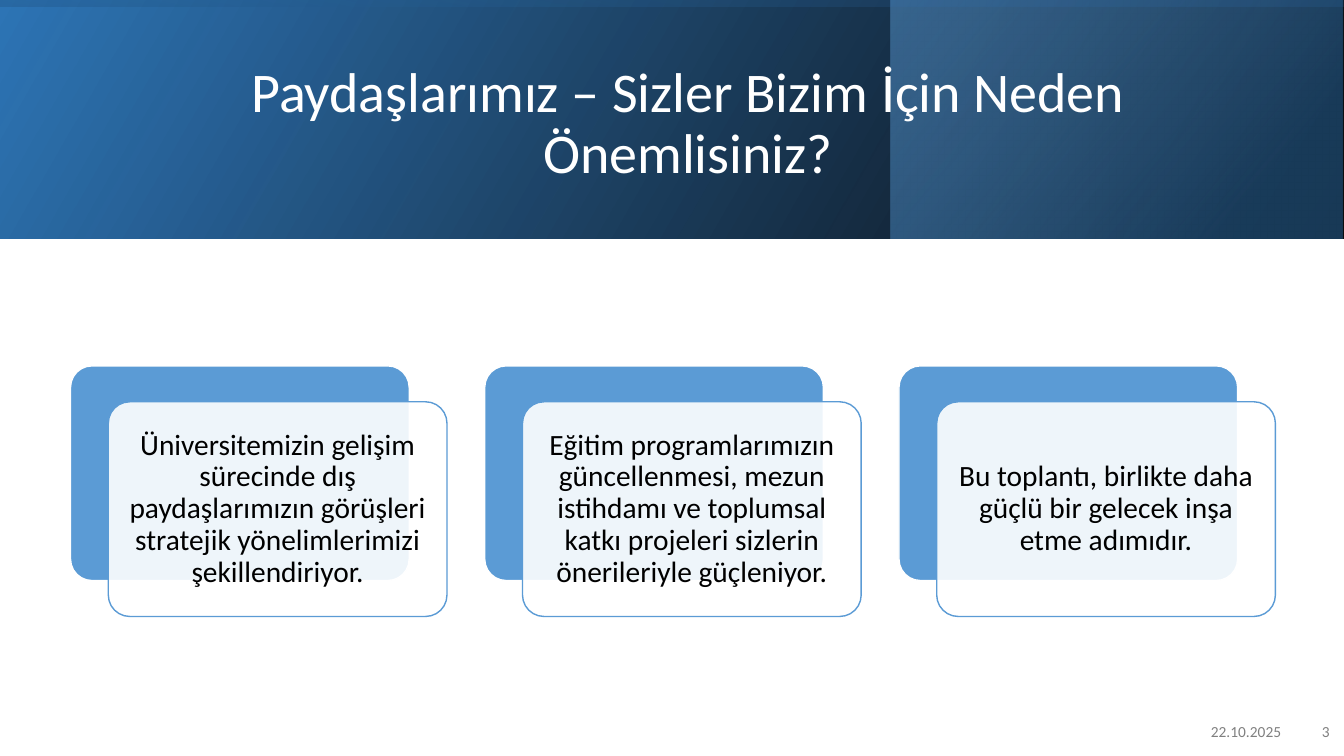
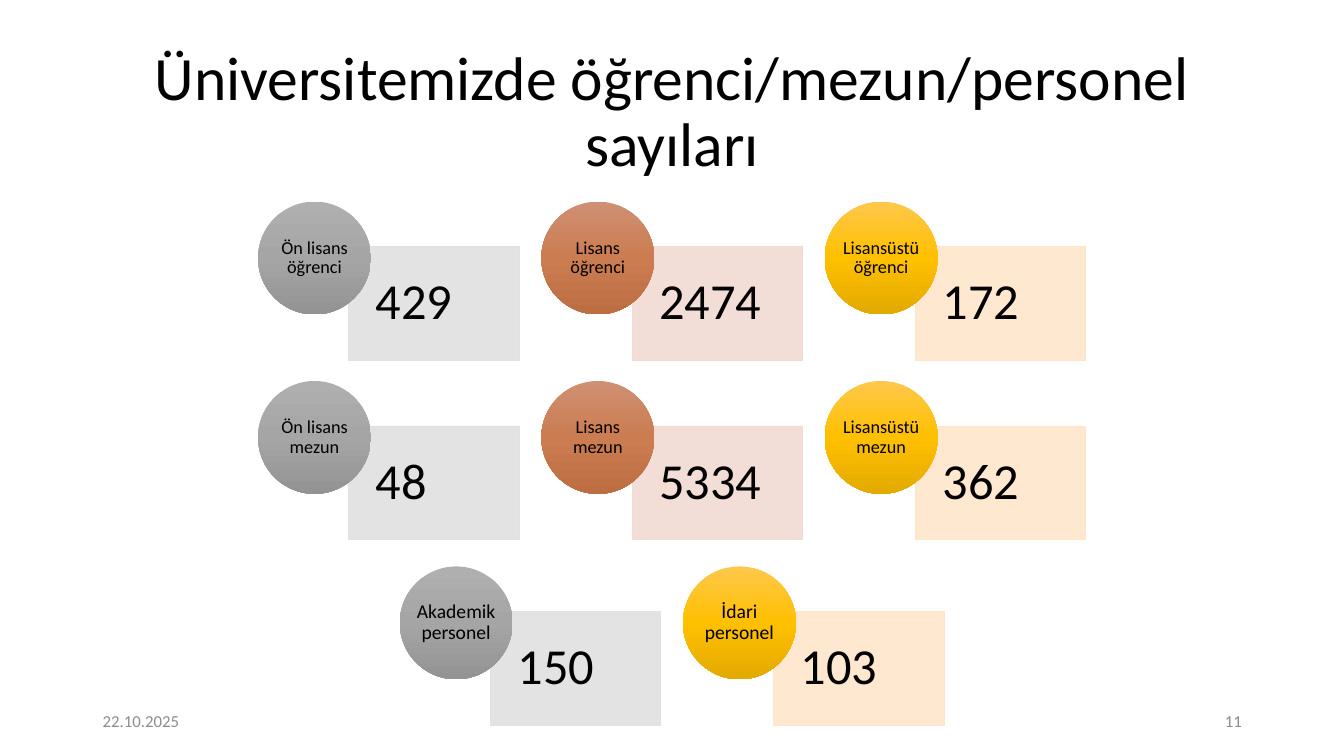
import dataclasses

import lxml.etree
import pptx
import pptx.dml.color
import pptx.enum.shapes
import pptx.enum.text
import pptx.oxml.ns
import pptx.util

ALIGN = pptx.enum.text.PP_ALIGN
SHAPE = pptx.enum.shapes.MSO_SHAPE
qn = pptx.oxml.ns.qn


@dataclasses.dataclass(frozen=True)
class Theme:
    font: str = "Calibri"
    black: str = "000000"
    white: str = "FFFFFF"
    blue: str = "5B9BD5"
    deep_blue: str = "2E75B6"
    navy: str = "1F4E79"
    banner_footer: str = "808080"
    plain_footer: str = "8C8C8C"
    banner_title_size: int = 40
    plain_title_size: int = 44
    banner_footer_size: int = 11
    plain_footer_size: int = 12
    card_size: int = 21
    count_size: int = 36
    label_size: int = 13
    staff_label_size: int = 14
    # circle gradient from top to bottom, then the tint of the count box
    grey: tuple = ("AFAFAF", "A5A5A5", "939393", "E1E1E1")
    copper: tuple = ("D09073", "CB7C50", "BC6E42", "F1DBD3")
    gold: tuple = ("FFC84B", "FFC000", "E3AA00", "FFE6CA")


theme = Theme()
deck = pptx.Presentation()
deck.slide_width = pptx.util.Inches(13.333)
deck.slide_height = pptx.util.Inches(7.5)
# All boxes are left, top, width, height on a grid of 100 columns and 100 rows.
COLUMN = deck.slide_width / 100
ROW = deck.slide_height / 100


def draw(slide, kind, box, stops, angle=0, line=None, line_width=1.0, flip=False):
    """Add a shape; stops are (position, colour, opacity), one stop is a solid fill."""
    shape = slide.shapes.add_shape(
        kind, *(round(n * unit) for n, unit in zip(box, (COLUMN, ROW) * 2)))
    shape.shadow.inherit = False
    if line:
        shape.line.color.rgb = pptx.dml.color.RGBColor.from_string(line)
        shape.line.width = pptx.util.Pt(line_width)
    else:
        shape.line.fill.background()
    properties = shape.element.spPr
    if flip:
        properties.find(qn("a:xfrm")).set("flipH", "1")
    if len(stops) == 1:
        shape.fill.solid()
        shape.fill.fore_color.rgb = pptx.dml.color.RGBColor.from_string(stops[0][1])
        colors = [properties.find(qn("a:solidFill"))[0]]
    else:
        shape.fill.gradient()
        gradient = properties.find(qn("a:gradFill"))
        gradient.find(qn("a:lin")).set("ang", str(angle * 60000))
        stop_list = gradient.find(qn("a:gsLst"))
        stop_list.clear()
        colors = []
        for position, color, _ in stops:
            stop = lxml.etree.SubElement(stop_list, qn("a:gs"), pos=str(position * 1000))
            colors.append(lxml.etree.SubElement(stop, qn("a:srgbClr"), val=color))
    for node, (_, _, opacity) in zip(colors, stops):
        if opacity < 100:
            lxml.etree.SubElement(node, qn("a:alpha"), val=str(opacity * 1000))
    return shape


def write(shape, text, size, color, align=ALIGN.CENTER, margins=None, spacing=0.9):
    """Put one paragraph in the middle of a shape; margins are in inches."""
    frame = shape.text_frame
    frame.word_wrap = True
    frame.auto_size = pptx.enum.text.MSO_AUTO_SIZE.NONE
    frame.vertical_anchor = pptx.enum.text.MSO_ANCHOR.MIDDLE
    left, top, right, bottom = margins or (0.1, 0.05, 0.1, 0.05)
    frame.margin_left, frame.margin_right = pptx.util.Inches(left), pptx.util.Inches(right)
    frame.margin_top, frame.margin_bottom = pptx.util.Inches(top), pptx.util.Inches(bottom)
    paragraph = frame.paragraphs[0]
    paragraph.alignment = align
    paragraph.line_spacing = spacing
    run = paragraph.add_run()
    run.text = text
    run.font.name = theme.font
    run.font.size = pptx.util.Pt(size)
    run.font.color.rgb = pptx.dml.color.RGBColor.from_string(color)


# Titles and footers of both slides
pages = [
    dict(title="Paydaşlarımız – Sizler Bizim İçin Neden Önemlisiniz?",
         title_box=(11.33, 5.07, 79.73, 22.93),
         title_size=theme.banner_title_size, title_color=theme.white,
         footer_size=theme.banner_footer_size, footer_color=theme.banner_footer,
         footers=[("22.10.2025", (73.58, 94.13, 22.5, 5.33), ALIGN.RIGHT),
                  ("3", (96, 94.13, 3.68, 5.33), ALIGN.RIGHT)]),
    dict(title="Üniversitemizde öğrenci/mezun/personel sayıları",
         title_box=(6.9, 5.33, 86.25, 19.33),
         title_size=theme.plain_title_size, title_color=theme.black,
         footer_size=theme.plain_footer_size, footer_color=theme.plain_footer,
         footers=[("22.10.2025", (6.9, 92.67, 22.5, 5.33), ALIGN.LEFT),
                  ("11", (70.65, 92.67, 22.5, 5.33), ALIGN.RIGHT)]),
]
slides = []
for page in pages:
    slide = deck.slides.add_slide(deck.slide_layouts[5])
    slides.append(slide)
    title = slide.shapes.title
    left, top, width, height = page["title_box"]
    title.left, title.top = round(left * COLUMN), round(top * ROW)
    title.width, title.height = round(width * COLUMN), round(height * ROW)
    write(title, page["title"], page["title_size"], page["title_color"])
    for text, box, align in page["footers"]:
        footer = slide.shapes.add_textbox(
            *(round(n * unit) for n, unit in zip(box, (COLUMN, ROW) * 2)))
        write(footer, text, page["footer_size"], page["footer_color"], align, spacing=1.0)
stakeholders, numbers = slides

# Banner: two gradients across the slide and a panel at the right
BANNER = 31.6
draw(stakeholders, SHAPE.RECTANGLE, (0, 0, 100, BANNER),
     [(0, theme.black, 96), (100, theme.deep_blue, 100)], angle=330, flip=True)
draw(stakeholders, SHAPE.RECTANGLE, (66.3, 0, 33.6, BANNER),
     [(19, theme.navy, 68), (100, theme.blue, 48)], angle=320, flip=True)
veil_width, veil_height = BANNER * 9 / 16, 100 * 16 / 9
veil = draw(stakeholders, SHAPE.RECTANGLE,
            (50 - veil_width / 2, (BANNER - veil_height) / 2, veil_width, veil_height),
            [(23, theme.deep_blue, 16), (99, theme.black, 45)], angle=350, flip=True)
veil.rotation = 270
banner_title = stakeholders.shapes.title.element
banner_title.getparent().append(banner_title)

# Cards, each a white sheet laid over a blue one
reasons = [
    "Üniversitemizin gelişim sürecinde dış paydaşlarımızın görüşleri stratejik "
    "yönelimlerimizi şekillendiriyor.",
    "Eğitim programlarımızın güncellenmesi, mezun istihdamı ve toplumsal katkı "
    "projeleri sizlerin önerileriyle güçleniyor.",
    "Bu toplantı, birlikte daha güçlü bir gelecek inşa etme adımıdır.",
]
CARD_LEFT, CARD_TOP, CARD_PITCH = 5.25, 48.4, 30.82
CARD_WIDTH, CARD_HEIGHT = 25.2, 28.4
SHEET_RIGHT, SHEET_DOWN = 2.81, 4.75
for index, reason in enumerate(reasons):
    left = CARD_LEFT + index * CARD_PITCH
    back = draw(stakeholders, SHAPE.ROUNDED_RECTANGLE,
                (left, CARD_TOP, CARD_WIDTH, CARD_HEIGHT),
                [(0, theme.blue, 100)], line=theme.white)
    front = draw(stakeholders, SHAPE.ROUNDED_RECTANGLE,
                 (left + SHEET_RIGHT, CARD_TOP + SHEET_DOWN, CARD_WIDTH, CARD_HEIGHT),
                 [(0, theme.white, 90)], line=theme.blue)
    back.adjustments[0] = front.adjustments[0] = 0.1
    write(front, reason, theme.card_size, theme.black, margins=(0.09,) * 4)

# Counts: row top, shift in pitches, label size, then label, count and palette
count_rows = [
    (26.67, 0, theme.label_size, [("Ön lisans öğrenci", "429", theme.grey),
                                  ("Lisans öğrenci", "2474", theme.copper),
                                  ("Lisansüstü öğrenci", "172", theme.gold)]),
    (50.4, 0, theme.label_size, [("Ön lisans mezun", "48", theme.grey),
                                 ("Lisans mezun", "5334", theme.copper),
                                 ("Lisansüstü mezun", "362", theme.gold)]),
    (74.93, 0.5, theme.staff_label_size, [("Akademik personel", "150", theme.grey),
                                          ("İdari personel", "103", theme.gold)]),
]
COUNT_LEFT, COUNT_PITCH = 19.2, 21.08
for top, shift, label_size, groups in count_rows:
    for index, (label, count, palette) in enumerate(groups):
        left = COUNT_LEFT + (index + shift) * COUNT_PITCH
        *shades, tint = palette
        count_box = draw(numbers, SHAPE.RECTANGLE, (left + 6.75, top + 5.93, 12.68, 15.07),
                         [(0, tint, 90)], line=tint, line_width=0.5)
        write(count_box, count, theme.count_size, theme.black, ALIGN.LEFT,
              margins=(0.27, 0.28, 0.28, 0.28))
        circle = draw(numbers, SHAPE.OVAL, (left, top, 8.4, 14.93),
                      [(at, shade, 100) for at, shade in zip((0, 50, 100), shades)], angle=90)
        write(circle, label, label_size, theme.black, margins=(0,) * 4)

deck.save("out.pptx")
